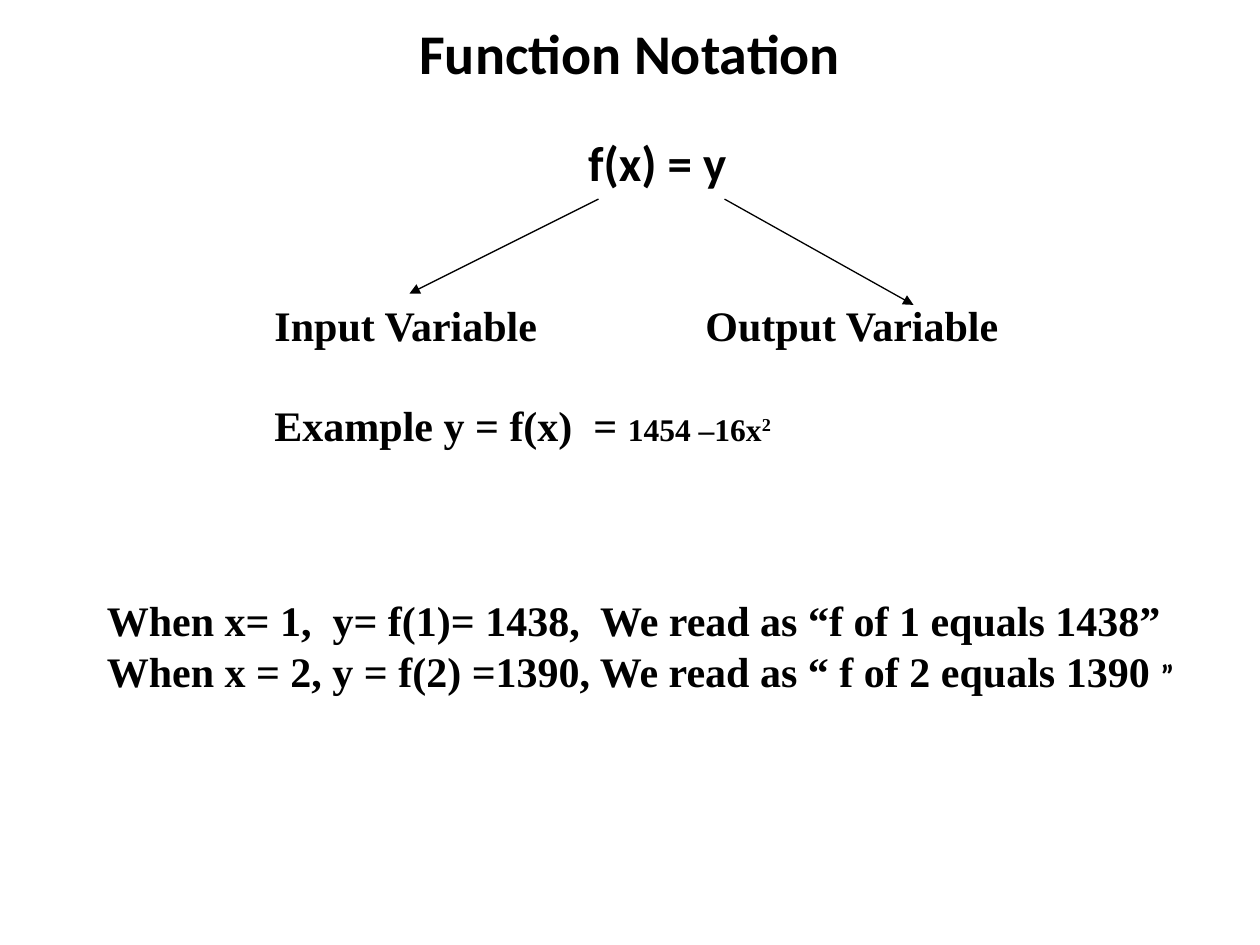
from dataclasses import dataclass

from lxml.etree import SubElement
from pptx import Presentation
from pptx.dml.color import RGBColor
from pptx.enum.shapes import MSO_CONNECTOR
from pptx.enum.text import MSO_ANCHOR, PP_ALIGN
from pptx.oxml.ns import qn
from pptx.slide import Slide
from pptx.util import Inches, Pt

COLORS = {"ink": "000000", "background": "FFFFFF"}
SANS, SERIF = "Calibri", "Times New Roman"


@dataclass
class Span:
    text: str
    size: float | None = None
    font: str | None = None
    superscript: bool = False


@dataclass
class Line:
    spans: list[Span]
    space_before: float = 0
    tab: float | None = None


@dataclass
class TextBlock:
    left: float
    top: float
    width: float
    height: float
    lines: list[Line]
    size: float
    font: str
    centered: bool = False
    wrap: bool = False


@dataclass
class Arrow:
    start: tuple[float, float]
    end: tuple[float, float]


TEXT_BLOCKS = [
    # Title
    TextBlock(0.75, 0, 8.5, 0.83, [Line([Span("Function Notation")])],
              32, SANS, centered=True, wrap=True),
    # General formula
    TextBlock(4.57, 1, 1.5, 0.57, [Line([Span("f(x) = y")])], 28, SANS),
    # Variable labels and example
    TextBlock(2.08, 2.33, 6.02, 1.6, [
        Line([Span("Input Variable\tOutput Variable")], tab=3.42),
        Line([Span("Example y = f(x)  = "), Span("1454 –16x", 18),
              Span("2", 18, superscript=True)], space_before=28),
    ], 24, SERIF),
    # How to read the values
    TextBlock(0.75, 4.67, 8.84, 0.91, [
        Line([Span("When x= 1,  y= f(1)= 1438,  We read as “f of 1 equals 1438”")]),
        Line([Span("When x = 2, y = f(2) =1390, We read as “ f of 2 equals 1390 "),
              Span("”", 18, SANS)]),
    ], 24, SERIF),
]

ARROWS = [
    Arrow((4.75, 1.58), (3.25, 2.33)),
    Arrow((5.75, 1.58), (7.25, 2.42)),
]


def add_text(page: Slide, block: TextBlock) -> None:
    box = page.shapes.add_textbox(Inches(block.left), Inches(block.top),
                                  Inches(block.width), Inches(block.height))
    frame = box.text_frame
    frame.word_wrap = block.wrap
    frame.vertical_anchor = MSO_ANCHOR.MIDDLE if block.centered else MSO_ANCHOR.TOP
    for index, line in enumerate(block.lines):
        para = frame.add_paragraph() if index else frame.paragraphs[0]
        para.alignment = PP_ALIGN.CENTER if block.centered else PP_ALIGN.LEFT
        para.space_before = Pt(line.space_before)
        if line.tab is not None:
            tabs = SubElement(para._p.get_or_add_pPr(), qn("a:tabLst"))
            SubElement(tabs, qn("a:tab"), pos=str(Inches(line.tab)), algn="l")
        para.font.name = block.font
        para.font.size = Pt(block.size)
        para.font.bold = True
        para.font.color.rgb = RGBColor.from_string(COLORS["ink"])
        for span in line.spans:
            run = para.add_run()
            run.text = span.text
            if span.size:
                run.font.size = Pt(span.size)
            if span.font:
                run.font.name = span.font
            if span.superscript:
                run._r.get_or_add_rPr().set("baseline", "30000")


def add_arrow(page: Slide, arrow: Arrow) -> None:
    ends = [Inches(value) for value in arrow.start + arrow.end]
    connector = page.shapes.add_connector(MSO_CONNECTOR.STRAIGHT, *ends)
    connector.line.color.rgb = RGBColor.from_string(COLORS["ink"])
    connector.line.width = Pt(0.75)
    SubElement(connector.line._get_or_add_ln(), qn("a:tailEnd"), type="triangle")
    SubElement(connector._element.spPr, qn("a:effectLst"))


def main() -> None:
    deck = Presentation()
    deck.slide_width, deck.slide_height = Inches(10), Inches(7.5)
    page = deck.slides.add_slide(deck.slide_layouts[6])
    page.background.fill.solid()
    page.background.fill.fore_color.rgb = RGBColor.from_string(COLORS["background"])
    for block in TEXT_BLOCKS:
        add_text(page, block)
    for arrow in ARROWS:
        add_arrow(page, arrow)
    deck.save("out.pptx")


if __name__ == "__main__":
    main()
